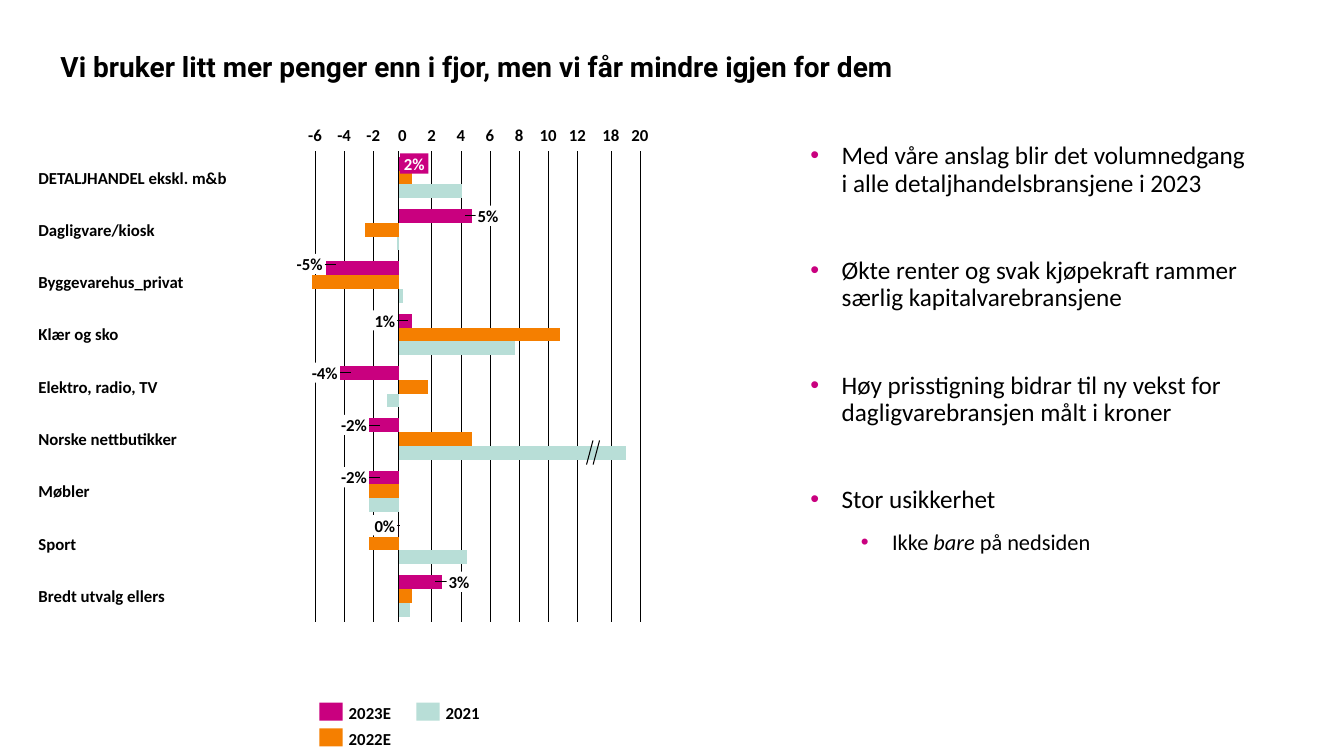
import lxml.etree
import pptx
import pptx.chart.data
import pptx.dml.color
import pptx.enum.chart
import pptx.enum.shapes
import pptx.enum.text
import pptx.oxml.ns
import pptx.util

Pt = pptx.util.Pt
qn = pptx.oxml.ns.qn
ALIGN = pptx.enum.text.PP_ALIGN
ANCHOR = pptx.enum.text.MSO_ANCHOR
RECT = pptx.enum.shapes.MSO_SHAPE.RECTANGLE
COLORS = {"black": "000000", "white": "FFFFFF", "2023E": "C9007F",
          "2022E": "F57F00", "2021": "B8DED7"}
RGB = {k: pptx.dml.color.RGBColor.from_string(v) for k, v in COLORS.items()}

prs = pptx.Presentation()
prs.slide_width, prs.slide_height = Pt(960), Pt(540)
s = prs.slides.add_slide(prs.slide_layouts[1])


def add_text(text, x, y, w, h=14.4, align=ALIGN.LEFT, anchor=ANCHOR.MIDDLE,
             color="black", fill=None, inset=0, wrap=False):
    """Add a bold 12 pt label, on a filled rectangle if fill is given."""
    box = Pt(x), Pt(y), Pt(w), Pt(h)
    if fill:
        sp = s.shapes.add_shape(RECT, *box)
        sp.shadow.inherit = False
        sp.fill.solid()
        sp.fill.fore_color.rgb = RGB[fill]
        sp.line.fill.background()
    else:
        sp = s.shapes.add_textbox(*box)
    if not text:
        return
    tf = sp.text_frame
    tf.margin_left = tf.margin_right = Pt(inset)
    tf.margin_top = tf.margin_bottom = 0
    tf.word_wrap = wrap
    tf.vertical_anchor = anchor
    p = tf.paragraphs[0]
    p.alignment = align
    r = p.add_run()
    r.text = text
    r.font.name, r.font.size, r.font.bold = "Calibri", Pt(12), True
    r.font.color.rgb = RGB[color]


def add_line(x1, y1, x2, y2, width):
    line = s.shapes.add_connector(pptx.enum.shapes.MSO_CONNECTOR.STRAIGHT,
                                  Pt(x1), Pt(y1), Pt(x2), Pt(y2))
    line.line.color.rgb = RGB["black"]
    line.line.width = Pt(width)
    lxml.etree.SubElement(line.element.spPr, qn("a:effectLst"))


# Title
title = s.shapes.title
title.left, title.top, title.width, title.height = Pt(43.2), Pt(25.9), Pt(828), Pt(33.8)
tf = title.text_frame
tf.margin_left = tf.margin_right = tf.margin_top = tf.margin_bottom = 0
tf.auto_size = pptx.enum.text.MSO_AUTO_SIZE.NONE
tf.vertical_anchor = ANCHOR.MIDDLE
p = tf.paragraphs[0]
p.alignment = ALIGN.LEFT
p.line_spacing = Pt(33)
r = p.add_run()
r.text = "Vi bruker litt mer penger enn i fjor, men vi får mindre igjen for dem"
r.font.name, r.font.size, r.font.bold = "Roboto", Pt(20), True
r.font.color.rgb = RGB["black"]

# Bullet list: level, space before, runs
bullets = [
    (0, 0, ["Med våre anslag blir det volumnedgang i alle detaljhandelsbransjene i 2023"]),
    (0, 37, ["Økte renter og svak kjøpekraft rammer særlig kapitalvarebransjene"]),
    (0, 37, ["Høy prisstigning bidrar til ny vekst for dagligvarebransjen målt i kroner"]),
    (0, 37, ["Stor usikkerhet"]),
    (1, 6, ["Ikke ", "bare", " på nedsiden"]),
]
body = s.placeholders[1]
body.left, body.top, body.width, body.height = Pt(578.9), Pt(102.2), Pt(315.4), Pt(383)
tf = body.text_frame
tf.margin_left = tf.margin_right = tf.margin_top = tf.margin_bottom = 0
tf.auto_size = pptx.enum.text.MSO_AUTO_SIZE.NONE
for i, (level, before, runs) in enumerate(bullets):
    p = tf.add_paragraph() if i else tf.paragraphs[0]
    p.level = level
    pPr = p._p.get_or_add_pPr()
    pPr.set("marL", str(Pt(22.3 + 36 * level)))
    pPr.set("indent", str(Pt(-22.3)))
    clr = lxml.etree.SubElement(pPr, qn("a:buClr"))
    lxml.etree.SubElement(clr, qn("a:srgbClr"), val=COLORS["2023E"])
    lxml.etree.SubElement(pPr, qn("a:buFont"), typeface="Arial")
    lxml.etree.SubElement(pPr, qn("a:buChar"), char="•")
    p.line_spacing = 0.9
    p.space_before, p.space_after = Pt(before), Pt(6)
    for text in runs:
        r = p.add_run()
        r.text = text
        r.font.name, r.font.size = "Calibri", Pt(18 - 2 * level)
        r.font.italic = text == "bare"
        r.font.color.rgb = RGB["black"]

# Scale with a break between 12 and 18; the chart's own axis marks zero
STEP = 20.82
ticks = {v: 287.5 + v / 2 * STEP for v in range(-6, 13, 2)}
ticks.update({18: 436.3, 20: 457.1})
for value, x in ticks.items():
    if value:
        add_line(x, 108, x, 444.2, 0.25)

# Bar chart
categories = ["DETALJHANDEL ekskl. m&b", "Dagligvare/kiosk", "Byggevarehus_privat",
              "Klær og sko", "Elektro, radio, TV", "Norske nettbutikker",
              "Møbler", "Sport", "Bredt utvalg ellers"]
data = pptx.chart.data.CategoryChartData()
data.categories = categories
data.add_series("2023E", [13, 32, -32, 6, -26, -13, -13, 0, 19])
data.add_series("2022E", [6, -15, -38, 71, 13, 32, -13, -13, 6])
data.add_series("2021", [28, -1, 2, 51, -5, 100, -13, 30, 5])
chart = s.shapes.add_chart(pptx.enum.chart.XL_CHART_TYPE.BAR_CLUSTERED, Pt(216.7),
                           Pt(101.5), Pt(247), Pt(349.2), data).chart
chart.font.name, chart.font.size = "Calibri", Pt(10)
chart.font.color.rgb = RGB["black"]
chart.has_legend = chart.has_title = False
plot = chart.plots[0]
plot.gap_width, plot.overlap, plot.vary_by_categories = 80, 0, False
for series in plot.series:
    series.invert_if_negative = False
    series.format.fill.solid()
    series.format.fill.fore_color.rgb = RGB[series.name]
for axis in (chart.category_axis, chart.value_axis):
    axis.has_major_gridlines = False
    axis.major_tick_mark = axis.minor_tick_mark = pptx.enum.chart.XL_TICK_MARK.NONE
    axis.tick_label_position = pptx.enum.chart.XL_TICK_LABEL_POSITION.NONE
chart.category_axis.reverse_order = True
chart.category_axis.format.line.color.rgb = RGB["black"]
chart.category_axis.format.line.width = Pt(0.75)
axis = chart.value_axis
axis.minimum_scale, axis.maximum_scale, axis.major_unit = -38, 106, 13
axis.format.line.fill.background()

# Inner plot layout, and no background so that the scale lines show through
chart_el = chart.element.find(qn("c:chart"))
plot_area = chart_el.find(qn("c:plotArea"))
for old in plot_area.findall(qn("c:layout")):
    plot_area.remove(old)
layout = lxml.etree.Element(qn("c:layout"))
plot_area.insert(0, layout)
manual = lxml.etree.SubElement(layout, qn("c:manualLayout"))
for tag, val in [("layoutTarget", "inner"), ("xMode", "edge"), ("yMode", "edge"),
                 ("x", "0.026"), ("y", "0.019"), ("w", "0.947"), ("h", "0.963")]:
    lxml.etree.SubElement(manual, qn("c:" + tag), val=val)
for place in (chart_el.addnext, plot_area.append):
    spPr = lxml.etree.Element(qn("c:spPr"))
    lxml.etree.SubElement(spPr, qn("a:noFill"))
    ln = lxml.etree.SubElement(spPr, qn("a:ln"))
    lxml.etree.SubElement(ln, qn("a:noFill"))
    place(spPr)

for value, x in ticks.items():
    add_text(str(value), x - 10, 89.3, 20, align=ALIGN.CENTER, anchor=ANCHOR.BOTTOM)

# Axis break on the longest bar
for x in (419, 423.7):
    slash = s.shapes.build_freeform(Pt(x + 4.6), Pt(314.6))
    slash.add_line_segments([(Pt(x), Pt(331.9))], close=False)
    sp = slash.convert_to_shape()
    sp.shadow.inherit = False
    sp.fill.background()
    sp.line.color.rgb = RGB["black"]
    sp.line.width = Pt(0.75)

# Row names and 2023E values: text, left, width, align, leader length, y shift
values = [
    ("2%", 285.8, 20.2, ALIGN.CENTER, 0, 0),
    ("5%", 339.8, 20.2, ALIGN.LEFT, 7.9, 0),
    ("-5%", 205.9, 25.9, ALIGN.RIGHT, 7.9, -3),
    ("1%", 263.5, 20.2, ALIGN.RIGHT, 7.9, 0),
    ("-4%", 216.7, 25.9, ALIGN.RIGHT, 7.9, 0),
    ("-2%", 237.6, 25.9, ALIGN.RIGHT, 7.9, 0),
    ("-2%", 237.6, 25.9, ALIGN.RIGHT, 7.9, 0),
    ("0%", 263.5, 20.2, ALIGN.RIGHT, 2.2, -3),
    ("3%", 319, 20.2, ALIGN.LEFT, 7.9, 0),
]
for i, (name, (text, x, w, align, leader, shift)) in enumerate(zip(categories, values)):
    row = 37.35 * i
    add_text(name, 27.4, 119.5 + row, 170, wrap=True)
    y = 109.6 + row + shift
    if leader:
        start, end = (x, x - leader) if align == ALIGN.LEFT else (x + w, x + w + leader)
        add_line(start, y + 7.2, end, y + 7.2, 0.5)
    inside = align == ALIGN.CENTER
    add_text(text, x, y, w, align=align, inset=1.4, color="white" if inside else "black",
             fill="2023E" if inside else "white")

# Legend
for name, x, y in [("2023E", 228.2, 501.8), ("2022E", 228.2, 520.2), ("2021", 297.4, 501.8)]:
    add_text("", x, y, 16.6, 13, fill=name)
    add_text(name, x + 20.9, y, 40, wrap=True)

prs.save("out.pptx")
